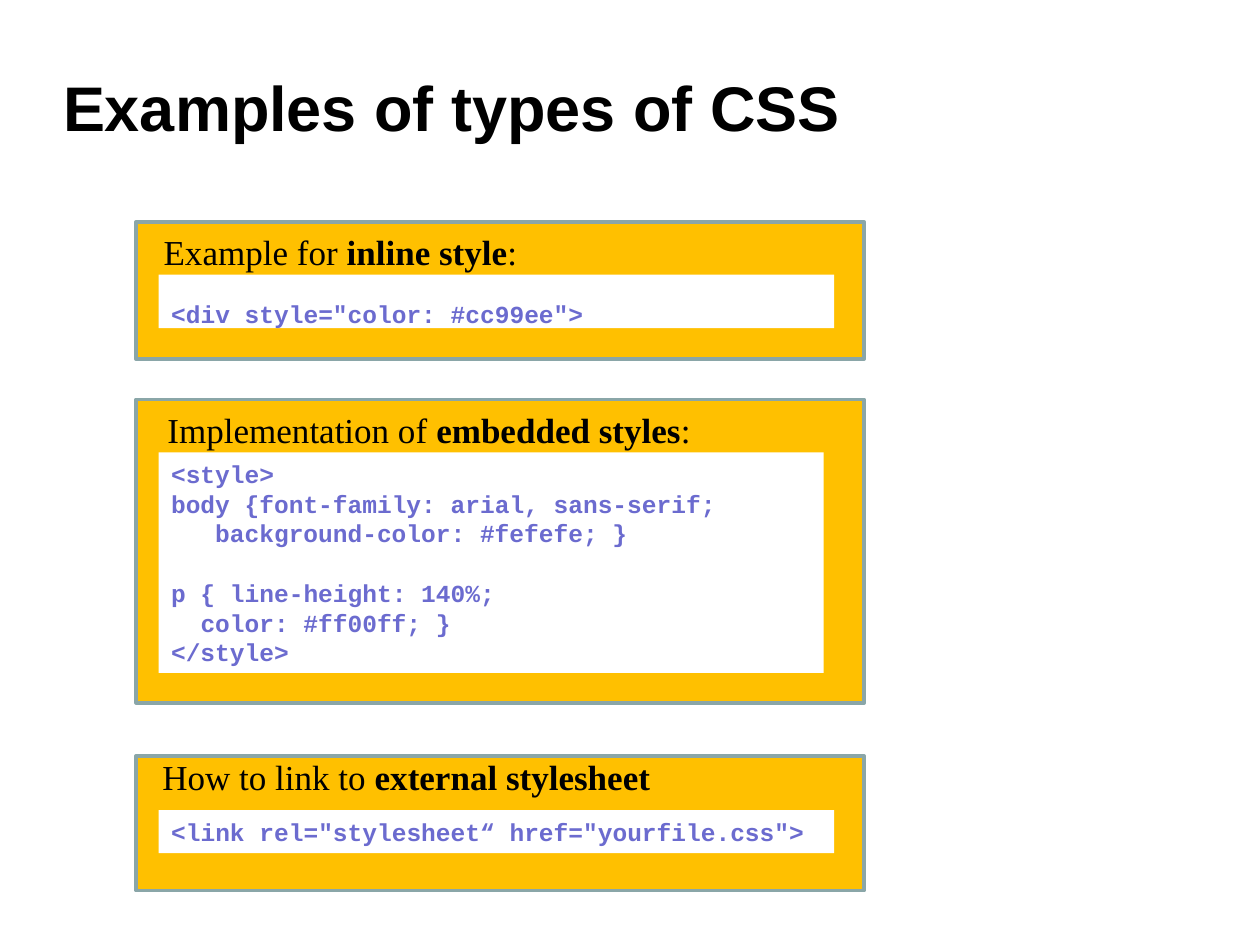
from pptx import Presentation
from pptx.dml.color import RGBColor
from pptx.enum.shapes import MSO_SHAPE
from pptx.enum.text import MSO_ANCHOR, PP_ALIGN
from pptx.util import Pt

RECT = MSO_SHAPE.RECTANGLE
TOP, MIDDLE = MSO_ANCHOR.TOP, MSO_ANCHOR.MIDDLE
LEFT = PP_ALIGN.LEFT

THEME = {
    "panel": "FFC000",
    "border": "8AA6A8",
    "code_fill": "FFFFFF",
    "title": {"name": "Arial", "size": 36, "bold": True, "color": "000000"},
    "heading": {"name": "Times New Roman", "size": 20, "bold": False, "color": "000000"},
    "code": {"name": "Courier New", "size": 14, "bold": True, "color": "6B6BCF"},
}
CODE_LINE = 17
CHAR_WIDTH = 8.4

TITLE = "Examples of types of CSS"
PANELS = [
    {
        "top": 126.7, "height": 78.5,
        "heading": ("Example for ", "inline style", ":"),
        "heading_at": (86.4, 1.5),
        "code": [(0, 0, '<div style="color: #cc99ee">')],
        "code_at": (30.3, 386, 30.5), "leading": 27,
    },
    {
        "top": 228.2, "height": 173.5,
        "heading": ("Implementation of ", "embedded styles", ":"),
        "heading_at": (88.6, 1.5),
        "code": [
            (0, 0, "<style>"),
            (0, 0, "body {font-family: arial, sans-serif;"),
            (3, 0, "background-color: #fefefe; }"),
            (0, 1, "p { line-height: 140%;"),
            (2, 0, "color: #ff00ff; }"),
            (0, 0, "</style>"),
        ],
        "code_at": (30.3, 380, 126), "leading": CODE_LINE,
    },
    {
        "top": 432, "height": 77,
        "heading": ("How to link to ", "external stylesheet", ""),
        "heading_at": (85.7, -3.6),
        "code": [(0, 0, '<link rel="stylesheet“ href="yourfile.css">')],
        "code_at": (31, 386, 24.5), "leading": CODE_LINE,
    },
]
PANEL_LEFT, PANEL_WIDTH = 77.8, 416
CODE_LEFT = 90.7
HEADING_WIDTH, HEADING_HEIGHT = 386, 31.7


def add_run(p, text, style, **changes):
    r = p.add_run()
    r.text = text
    values = {**THEME[style], **changes}
    r.font.color.rgb = RGBColor.from_string(values.pop("color"))
    values["size"] = Pt(values["size"])
    for key, value in values.items():
        setattr(r.font, key, value)


def add_box(s, left, top, width, height, fill, line=None):
    sp = s.shapes.add_shape(RECT, Pt(left), Pt(top), Pt(width), Pt(height))
    sp.shadow.inherit = False
    sp.fill.solid()
    sp.fill.fore_color.rgb = RGBColor.from_string(fill)
    if line:
        sp.line.color.rgb = RGBColor.from_string(line)
        sp.line.width = Pt(2)
    else:
        sp.line.fill.background()
    return sp


def add_code(s, panel):
    offset, width, height = panel["code_at"]
    sp = add_box(s, CODE_LEFT, panel["top"] + offset, width, height, THEME["code_fill"])
    tf = sp.text_frame
    tf.word_wrap = True
    tf.vertical_anchor = TOP
    for i, (indent, gap, text) in enumerate(panel["code"]):
        p = tf.add_paragraph() if i else tf.paragraphs[0]
        p.alignment = LEFT
        p.line_spacing = Pt(panel["leading"])
        p.space_before = Pt(gap * CODE_LINE)
        if indent:
            p._p.get_or_add_pPr().set("marL", str(Pt(indent * CHAR_WIDTH)))
        add_run(p, text, "code")


def add_heading(s, panel):
    left, offset = panel["heading_at"]
    sp = s.shapes.add_textbox(Pt(left), Pt(panel["top"] + offset),
                              Pt(HEADING_WIDTH), Pt(HEADING_HEIGHT))
    tf = sp.text_frame
    tf.word_wrap = True
    before, strong, after = panel["heading"]
    p = tf.paragraphs[0]
    add_run(p, before, "heading")
    add_run(p, strong, "heading", bold=True)
    if after:
        add_run(p, after, "heading")


def main():
    prs = Presentation()
    prs.slide_width, prs.slide_height = Pt(720), Pt(540)
    s = prs.slides.add_slide(prs.slide_layouts[5])

    title = s.shapes.title
    place = {"left": 28.8, "top": 35.3, "width": 637, "height": 51}
    for key, value in place.items():
        setattr(title, key, Pt(value))
    tf = title.text_frame
    tf.word_wrap = True
    tf.vertical_anchor = MIDDLE
    p = tf.paragraphs[0]
    p.alignment = LEFT
    add_run(p, TITLE, "title")

    for panel in PANELS:
        add_box(s, PANEL_LEFT, panel["top"], PANEL_WIDTH, panel["height"],
                THEME["panel"], THEME["border"])
        add_code(s, panel)
        add_heading(s, panel)

    prs.save("out.pptx")


if __name__ == "__main__":
    main()
